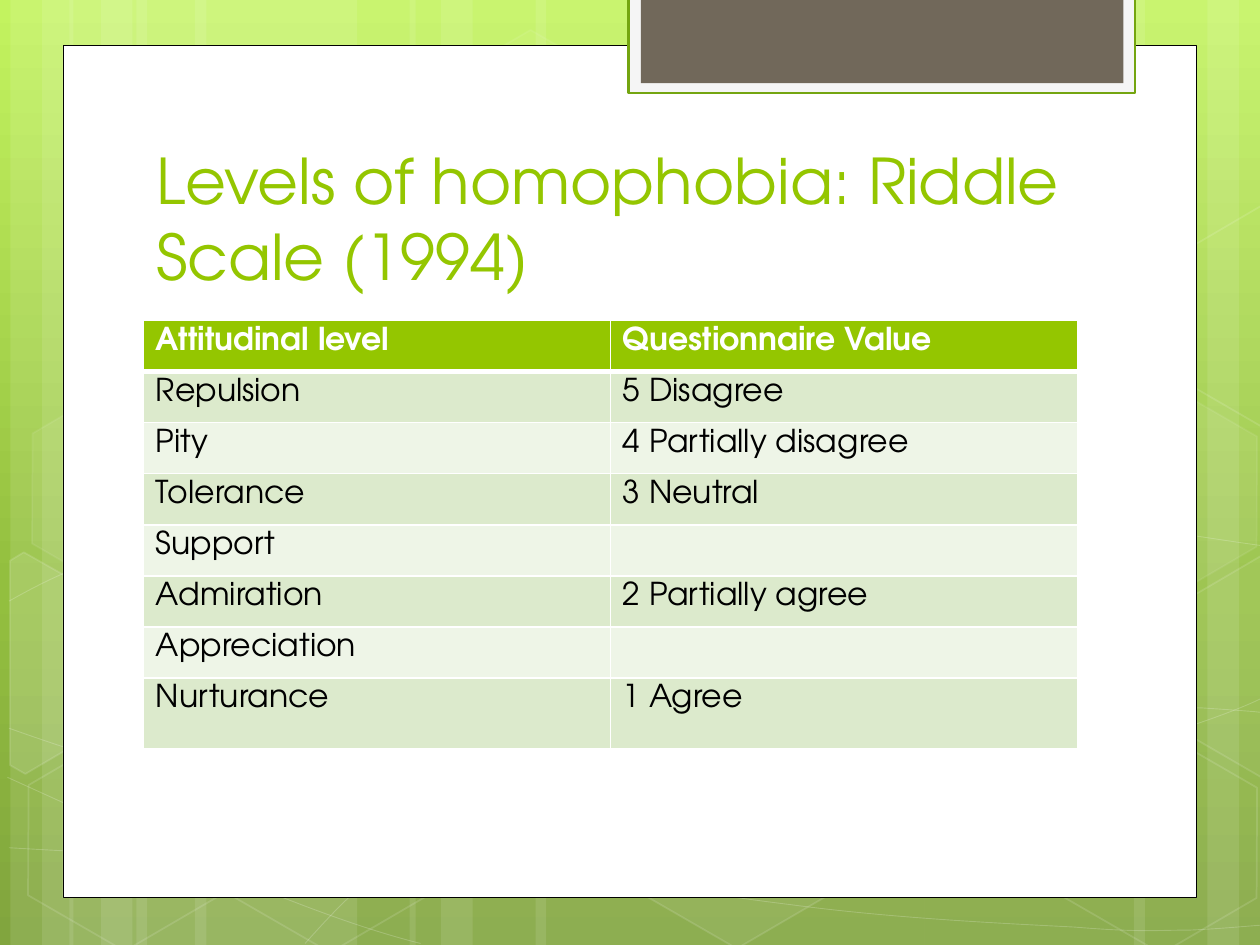
from copy import deepcopy
from math import cos, radians, sin

from lxml import etree
from pptx import Presentation
from pptx import util as u
from pptx.dml.color import RGBColor
from pptx.enum import shapes, text
from pptx.oxml.ns import qn

COLORS = {
    "white": "FFFFFF", "black": "000000", "green": "94C600", "edge": "74A510",
    "tab frame": "F5F5F5", "tab": "71685A", "band": "DCEACC", "pale": "EEF5E7",
    "sky": "C3F35F", "leaf": "93BF3F", "moss": "81A53E",
}
FONT = "TeX Gyre Adventor"
TILT = 30


def paint(shape, fill=None, fill_alpha=100, line=None, width=1, line_alpha=100):
    """Set fill and outline by colour name, with opacity in percent."""
    shape.shadow.inherit = False
    for name, target, alpha in ((fill, shape.fill, fill_alpha), (line, shape.line.fill, line_alpha)):
        if name is None:
            target.background()
            continue
        target.solid()
        target.fore_color.rgb = RGBColor.from_string(COLORS[name])
        if alpha < 100:
            holder = shape._element.spPr
            if target is not shape.fill:
                holder = holder.find(qn("a:ln"))
            color = holder.find(qn("a:solidFill"))[0]
            etree.SubElement(color, qn("a:alpha"), val=str(alpha * 1000))
    if line:
        shape.line.width = u.Pt(width)


def write(frame, content, size=18, color="black", bold=False):
    para = frame.paragraphs[0]
    para.alignment = text.PP_ALIGN.LEFT
    span = para.add_run()
    span.text = content
    span.font.name = FONT
    span.font.size = u.Pt(size)
    span.font.bold = bold
    span.font.color.rgb = RGBColor.from_string(COLORS[color])


deck = Presentation()
deck.slide_width, deck.slide_height = u.Cm(25.4), u.Cm(19.05)
page = deck.slides.add_slide(deck.slide_layouts[6])

# Background gradient, top to bottom
backdrop = page.background.fill
backdrop.gradient()
backdrop.gradient_angle = 270
stop_list = page._element.find(".//" + qn("a:gsLst"))
stop_list.append(deepcopy(stop_list[0]))
for stop, (position, name) in zip(backdrop.gradient_stops, [(0, "sky"), (0.62, "leaf"), (1, "moss")]):
    stop.position = position
    stop.color.rgb = RGBColor.from_string(COLORS[name])

# Full-height translucent stripes: left, width
stripes = [
    (2.75, 4.45), (0.21, 1.27), (0.85, 2.12), (3.93, 4.45), (1.4, 1.27), (2.04, 2.12),
    (18.63, 4.45), (24.34, 1.27), (22.86, 2.12), (10.8, 7.83), (8.26, 1.27), (8.89, 2.12),
]
for left, width in stripes:
    stripe = page.shapes.add_shape(
        shapes.MSO_SHAPE.RECTANGLE, u.Cm(left), 0, u.Cm(width), deck.slide_height)
    paint(stripe, "white", 10)

# Waves: a start point, then three Bezier points for each segment
waves = [
    [(0.18, 17.09), (1.55, 17.17), (2.92, 17.25), (4.83, 17.22), (6.73, 17.2), (9.09, 17.15),
     (11.63, 16.89), (14.17, 16.64), (17.78, 16.15), (20.12, 15.67), (22.43, 15.19),
     (24.82, 14.43), (25.58, 14)],
    [(0.18, 12.12), (0.91, 11.71), (1.65, 11.33), (3.07, 10.95), (4.52, 10.57), (6.58, 10.01),
     (8.81, 9.83), (11.07, 9.65), (13.82, 9.63), (16.61, 9.83), (19.41, 10.03),
     (24.05, 10.82), (25.58, 11.02)],
    [(0.15, 15.67), (3.23, 17.07), (6.27, 18.47), (8.48, 19.02)],
    [(0.18, 14.68), (0.97, 14.96), (1.78, 15.24), (3.25, 15.65), (4.72, 16.03), (6.93, 16.66),
     (9.07, 17.09), (11.18, 17.53), (13.84, 17.98), (15.95, 18.24), (18.06, 18.52),
     (20.32, 18.62), (21.67, 18.69), (22.99, 18.8), (23.34, 18.75), (24, 18.75),
     (24.66, 18.72), (25.12, 18.67), (25.58, 18.64)],
    [(6.15, 19.02), (6.6, 18.52), (7.06, 18.01), (7.67, 17.55), (8.28, 17.09), (9.14, 16.59),
     (9.86, 16.23), (10.57, 15.88), (11, 15.72), (11.94, 15.47), (12.85, 15.21),
     (14.55, 14.86), (15.44, 14.68), (16.36, 14.5), (16.48, 14.5), (17.27, 14.45),
     (18.06, 14.38), (19.3, 14.3), (20.17, 14.27), (21.06, 14.25), (22.5, 14.27),
     (22.5, 14.27), (22.5, 14.27), (24.21, 14.27), (24.21, 14.27), (24.66, 14.3),
     (25.1, 14.33), (25.32, 14.35), (25.55, 14.38), (25.48, 14.35), (25.55, 14.38)],
]
for wave in waves:
    points = [(u.Cm(x), u.Cm(y)) for x, y in wave]
    builder = page.shapes.build_freeform(*points[0])
    builder.add_line_segments(points[1:], close=False)
    curve = builder.convert_to_shape()
    paint(curve, line="white", width=0.5, line_alpha=20)
    # Join every three straight segments into one Bezier segment
    segments = list(curve._element.iter(qn("a:lnTo")))
    outline = segments[0].getparent()
    for first in range(0, len(segments), 3):
        bezier = etree.SubElement(outline, qn("a:cubicBezTo"))
        for segment in segments[first:first + 3]:
            bezier.append(segment[0])
            outline.remove(segment)

# Hexagons: left, top, fill opacity, line opacity
hexagons = [
    (8.48, 0.91, 4, 8), (12.62, 14.96, 6, 12), (0.28, 15.01, 0, 12), (0.36, 7.92, 7, 8),
    (4.42, 15.04, 0, 12), (19.13, 11.51, 10, 12), (21.18, 15.06, 0, 12), (21.18, 7.98, 7, 8),
]
for left, top, fill_alpha, line_alpha in hexagons:
    hexagon = page.shapes.add_shape(
        shapes.MSO_SHAPE.HEXAGON, u.Cm(left), u.Cm(top), u.Cm(4.45), u.Cm(3.86))
    hexagon.adjustments[0] = 0.285
    hexagon.rotation = TILT
    paint(hexagon, "white" if fill_alpha else None, fill_alpha, "white", 1, line_alpha)

# Hexagons cut by the slide edges: fill opacity, centre, corners after tilting
cut_hexagons = [
    (10, (0.91, 13.59),
     [(0.2, 11.3), (0.48, 11.13), (2.44, 12.24), (2.41, 14.48), (0.51, 15.6), (0.2, 15.42)]),
    (4, (25.02, 13.21),
     [(23.52, 12.32), (25.43, 11.2), (25.63, 11.33), (25.63, 15.57), (25.45, 15.67), (23.52, 14.55)]),
    (0, (25.02, 6.12),
     [(23.52, 5.26), (25.43, 4.14), (25.65, 4.27), (25.63, 8.51), (25.45, 8.61), (23.52, 7.49)]),
]
c, s = cos(radians(TILT)), sin(radians(TILT))
for fill_alpha, (mid_x, mid_y), corners in cut_hexagons:
    points = [(u.Cm(mid_x + (x - mid_x) * c + (y - mid_y) * s),
               u.Cm(mid_y - (x - mid_x) * s + (y - mid_y) * c)) for x, y in corners]
    builder = page.shapes.build_freeform(*points[0])
    builder.add_line_segments(points[1:], close=True)
    cut_hexagon = builder.convert_to_shape()
    cut_hexagon.rotation = TILT
    paint(cut_hexagon, "white" if fill_alpha else None, fill_alpha, "white", 1, 12)

# White panel and the tab at its top
panels = [
    ((1.27, 0.91, 22.86, 17.19), "white", "black", 0.5),
    ((12.67, -0.05, 10.21, 1.93), "tab frame", "edge", 1.25),
    ((12.92, -0.05, 9.73, 1.73), "tab", None, 0),
]
for place, fill, line, width in panels:
    panel = page.shapes.add_shape(shapes.MSO_SHAPE.RECTANGLE, *map(u.Cm, place))
    paint(panel, fill, line=line, width=width)

title = page.shapes.add_textbox(u.Cm(2.9), u.Cm(2.85), u.Cm(19.5), u.Cm(3.18)).text_frame
title.word_wrap = True
title.vertical_anchor = text.MSO_ANCHOR.BOTTOM
write(title, "Levels of homophobia: Riddle Scale (1994)", size=36, color="green")

# Riddle scale table
levels = [
    ("Attitudinal level", "Questionnaire Value"),
    ("Repulsion", "5 Disagree"),
    ("Pity", "4 Partially disagree"),
    ("Tolerance", "3 Neutral"),
    ("Support", ""),
    ("Admiration", "2 Partially agree"),
    ("Appreciation", ""),
    ("Nurturance", "1 Agree"),
]
table = page.shapes.add_table(
    len(levels), 2, u.Cm(2.89), u.Cm(6.46), u.Cm(18.83), u.Cm(8.64)).table
for row, labels in enumerate(levels):
    header = row == 0
    table.rows[row].height = u.Cm(1.43 if row == len(levels) - 1 else 1.03)
    for column, label in enumerate(labels):
        cell = table.cell(row, column)
        for side in ("L", "R", "T", "B"):
            thick = (row, side) in ((0, "B"), (1, "T"))
            border = etree.SubElement(cell._tc.get_or_add_tcPr(), qn("a:ln" + side),
                                      w=str(u.Pt(3 if thick else 1)))
            solid = etree.SubElement(border, qn("a:solidFill"))
            etree.SubElement(solid, qn("a:srgbClr"), val=COLORS["white"])
        cell.fill.solid()
        fill = "green" if header else ("band" if row % 2 else "pale")
        cell.fill.fore_color.rgb = RGBColor.from_string(COLORS[fill])
        if label:
            write(cell.text_frame, label, color="white" if header else "black", bold=header)

deck.save("out.pptx")
